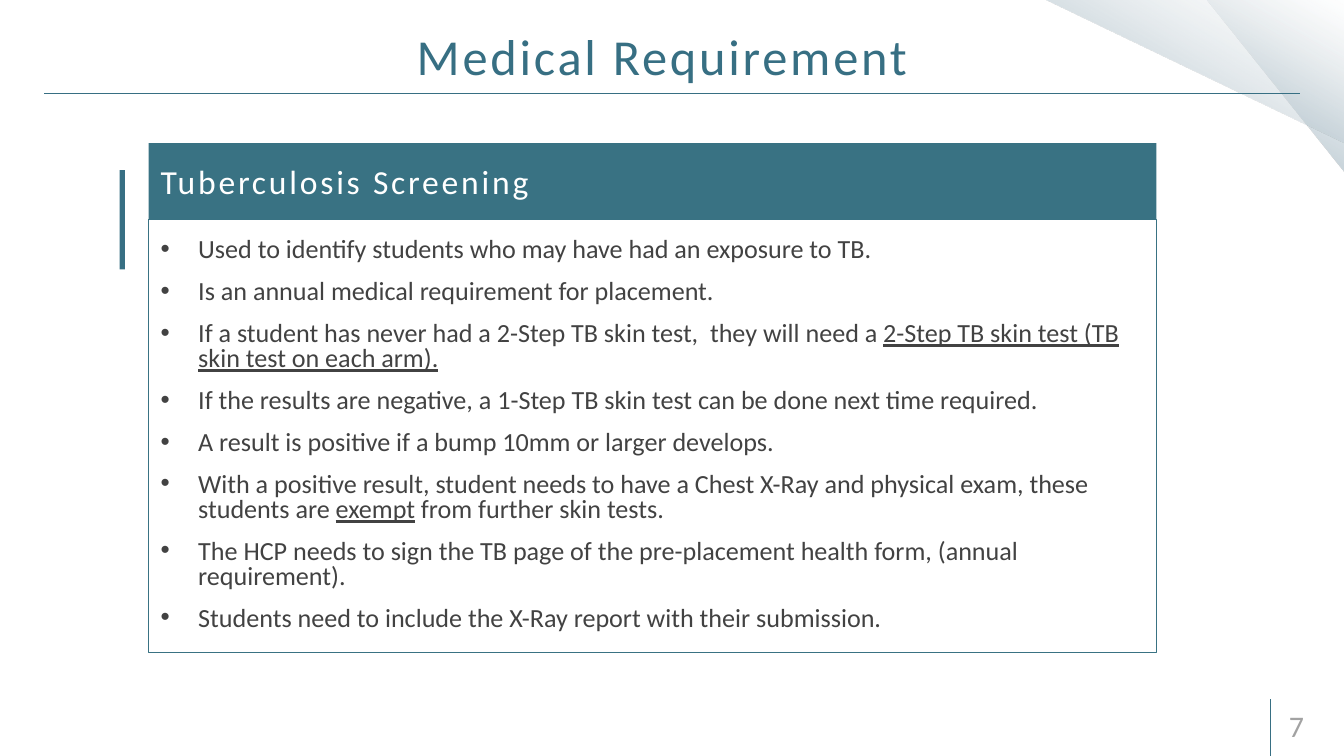
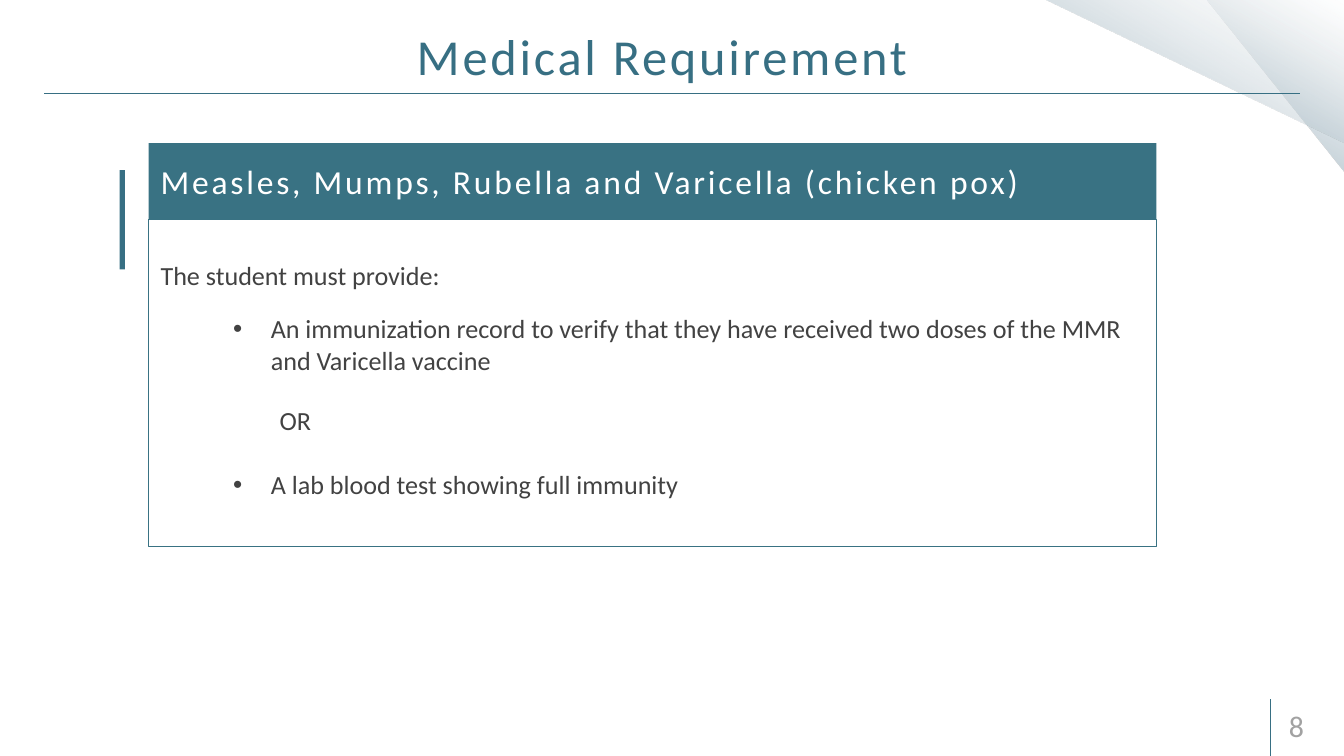
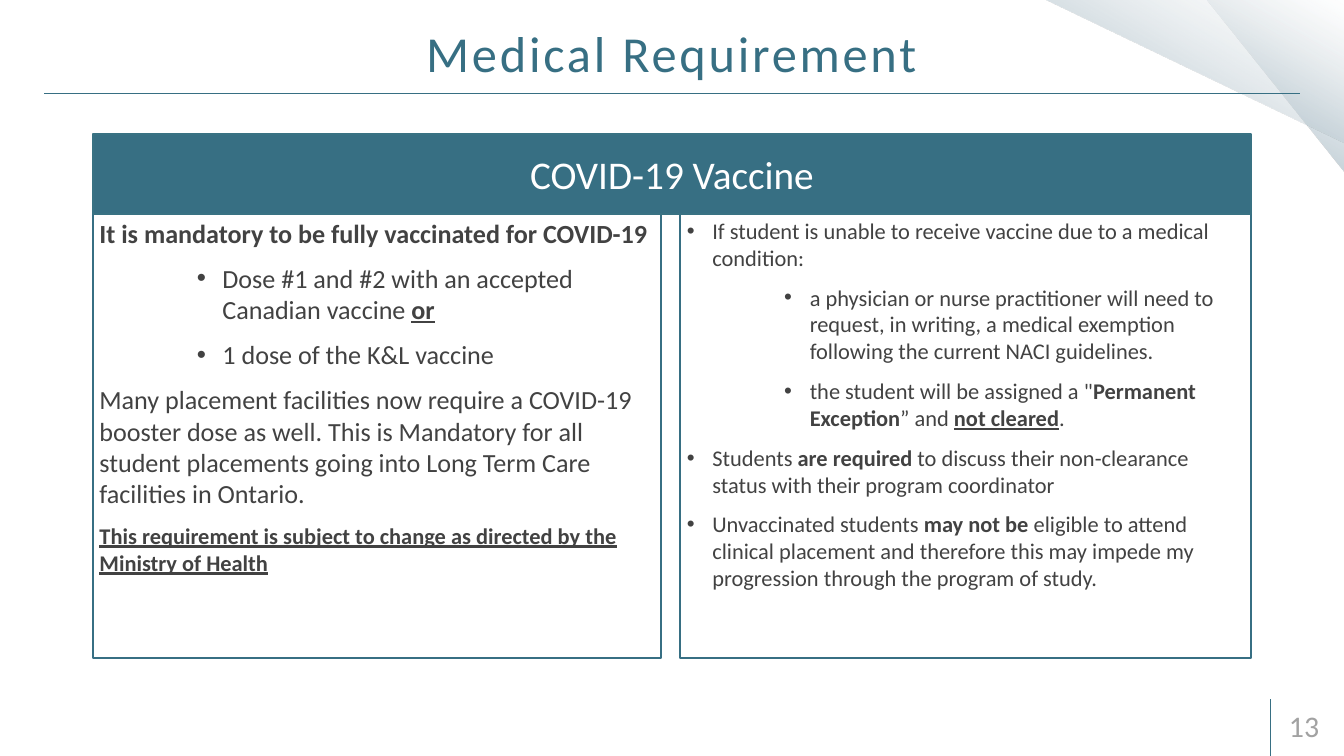
"""Build three slides on the medical requirements for student placements."""
from dataclasses import dataclass

from pptx import Presentation
from pptx import util as u
from pptx.dml.color import RGBColor
from pptx.enum import shapes, text
from pptx.oxml import parse_xml
from pptx.oxml.ns import nsdecls, qn

TEAL = RGBColor(0x37, 0x6F, 0x83)
PANEL_TEAL = RGBColor(0x39, 0x72, 0x83)
INK = RGBColor(0x42, 0x42, 0x42)
GREY = RGBColor(0xA2, 0xA2, 0xA2)
WHITE = RGBColor(0xFF, 0xFF, 0xFF)
CORNER_STOPS = [(0, "9DB4C0", 100), (50, "B3C3CC", 44), (100, "E2E8EB", 0)]
FONT = "Calibri"
TITLE = "Medical Requirement"
WIDTH, HEIGHT = 20, 11.25
WIDE_INSETS = (0.18, 0.09)
SLIM_INSETS = (0.1, 0.05)


@dataclass
class Style:
    """Describe one kind of paragraph; a hanging indent brings a bullet."""
    size: float
    color: RGBColor = INK
    left: float = 0
    hang: float = 0
    line: float = 1
    before: float = 0
    after: float = 0
    level: int = 0
    tracking: int = 0
    align: text.PP_ALIGN = text.PP_ALIGN.LEFT


CENTER = text.PP_ALIGN.CENTER
TITLE_STYLE = Style(54, TEAL, tracking=3, align=CENTER)
HEADING = Style(36, WHITE, tracking=3)
BANNER = Style(42, WHITE, align=CENTER)
NUMBER = Style(32, GREY)

POINT = Style(28, left=0.56, hang=0.56, line=0.8, after=18)
INTRO = Style(28, line=0.8, after=18)
OPTION = Style(28, left=1.64, hang=0.56, before=5.6, after=18, level=1)
EITHER = Style(28, left=1.77, line=0.8, before=20, after=9)
LAST_OPTION = Style(28, left=1.64, hang=0.56, before=26, after=9, level=1)

LEAD = Style(28, before=5.6, after=9)
DOSE = Style(28, left=1.83, hang=0.38, before=5.6, after=9, level=1)
NOTICE = Style(24, before=4.8, after=9)
RULE = Style(24, left=0.38, hang=0.38, before=4.8, after=9)
SUBRULE = Style(24, left=1.83, hang=0.38, before=4.8, after=9, level=1)

TUBERCULOSIS = [
    (POINT, "Used to identify students who may have had an exposure to TB."),
    (POINT, "Is an annual medical requirement for placement."),
    (POINT, "If a student has never had a 2-Step TB skin test,  they will need a ",
     ("2-Step TB skin test (TB skin test on each arm).", "u")),
    (POINT, "If the results are negative, a 1-Step TB skin test can be done next time required."),
    (POINT, "A result is positive if a bump 10mm or larger develops."),
    (POINT, "With a positive result, student needs to have a Chest X-Ray and physical exam, "
     "these students are ", ("exempt", "u"), " from further skin tests."),
    (POINT, "The HCP needs to sign the TB page of the pre-placement health form, "
     "(annual requirement)."),
    (POINT, "Students need to include the X-Ray report with their submission."),
]
IMMUNITY = [
    (INTRO, "The student must provide:"),
    (OPTION, "An immunization record to verify that they have received two doses of the MMR "
     "and Varicella vaccine"),
    (EITHER, "OR"),
    (LAST_OPTION, "A lab blood test showing full immunity"),
]
COVID_DOSES = [
    (LEAD, ("It is mandatory to be fully vaccinated for COVID-19", "b")),
    (DOSE, "Dose #1 and #2 with an accepted Canadian vaccine ", ("or", "bu")),
    (DOSE, "1 dose of the K&L vaccine"),
    (LEAD, "Many placement facilities now require a COVID-19 booster dose as well. "
     "This is Mandatory for all student placements going into Long Term Care facilities "
     "in Ontario."),
    (NOTICE, ("This requirement is subject to change as directed by the Ministry of Health",
              "bu")),
]
COVID_EXEMPTIONS = [
    (RULE, "If student is unable to receive vaccine due to a medical condition:"),
    (SUBRULE, "a physician or nurse practitioner will need to request, in writing, "
     "a medical exemption following the current NACI guidelines."),
    (SUBRULE, "the student will be assigned a \"", ("Permanent Exception", "b"), "” and ",
     ("not cleared", "bu"), "."),
    (RULE, "Students ", ("are required ", "b"),
     "to discuss their non-clearance status with their program coordinator"),
    (RULE, "Unvaccinated students ", ("may not be", "b"),
     " eligible to attend clinical placement and therefore this may impede my progression "
     "through the program of study."),
]
SCREENINGS = [
    ("7", "Tuberculosis Screening", TUBERCULOSIS, 6.45),
    ("8", "Measles, Mumps, Rubella and Varicella (chicken pox)", IMMUNITY, 4.87),
]


def inches(*lengths):
    return [u.Inches(length) for length in lengths]


def place(shape, box):
    shape.left, shape.top, shape.width, shape.height = inches(*box)


def paint(shape, fill=None, line=None, line_width=0.75):
    if fill is None:
        shape.fill.background()
    else:
        shape.fill.solid()
        shape.fill.fore_color.rgb = fill
    if line is None:
        shape.line.fill.background()
    else:
        shape.line.color.rgb = line
        shape.line.width = u.Pt(line_width)


def set_indent(paragraph, style):
    properties = paragraph._p.get_or_add_pPr()
    properties.set("marL", str(u.Inches(style.left)))
    properties.set("indent", str(-u.Inches(style.hang)))
    bullet = '<a:buChar %s char="•"/>' if style.hang else "<a:buNone %s/>"
    if style.hang:
        properties.append(parse_xml('<a:buFont %s typeface="Arial"/>' % nsdecls("a")))
    properties.append(parse_xml(bullet % nsdecls("a")))


def write(shape, paragraphs, insets=WIDE_INSETS, anchor=text.MSO_ANCHOR.MIDDLE):
    frame = shape.text_frame
    frame.word_wrap = True
    frame.auto_size = text.MSO_AUTO_SIZE.NONE
    frame.vertical_anchor = anchor
    frame.margin_left = frame.margin_right = u.Inches(insets[0])
    frame.margin_top = frame.margin_bottom = u.Inches(insets[1])
    for index, (style, *parts) in enumerate(paragraphs):
        paragraph = frame.add_paragraph() if index else frame.paragraphs[0]
        paragraph.level = style.level
        set_indent(paragraph, style)
        paragraph.alignment = style.align
        paragraph.line_spacing = style.line
        paragraph.space_before = u.Pt(style.before if index else 0)
        paragraph.space_after = u.Pt(style.after)
        for part in parts:
            words, marks = (part, "") if isinstance(part, str) else part
            run = paragraph.add_run()
            run.text = words
            run.font.name = FONT
            run.font.size = u.Pt(style.size)
            run.font.color.rgb = style.color
            run.font.bold = "b" in marks
            run.font.underline = "u" in marks
            if style.tracking:
                run._r.get_or_add_rPr().set("spc", str(style.tracking * 100))


def add_block(slide, kind, box, fill=None, line=None, line_width=0.75):
    shape = slide.shapes.add_shape(kind, *inches(*box))
    shape.shadow.inherit = False
    paint(shape, fill, line, line_width)
    return shape


def add_corner(slide, width, height, right=WIDTH):
    box = (right - width, 0, width, height)
    triangle = add_block(slide, shapes.MSO_SHAPE.RIGHT_TRIANGLE, box)
    triangle.rotation = 180
    stops = "".join(
        f'<a:gs pos="{position * 1000}"><a:srgbClr val="{color}">'
        f'<a:alpha val="{opacity * 1000}"/></a:srgbClr></a:gs>'
        for position, color, opacity in CORNER_STOPS)
    gradient = parse_xml(
        f'<a:gradFill {nsdecls("a")} rotWithShape="1"><a:gsLst>{stops}</a:gsLst>'
        f'<a:lin ang="{120 * 60000}" scaled="0"/></a:gradFill>')
    properties = triangle._element.spPr
    properties.replace(properties.find(qn("a:noFill")), gradient)


def add_rule(slide, start, end):
    rule = slide.shapes.add_connector(shapes.MSO_CONNECTOR.STRAIGHT, *inches(*start, *end))
    rule.line.color.rgb = TEAL
    rule.line.width = u.Pt(1)
    rule._element.spPr.append(parse_xml("<a:effectLst %s/>" % nsdecls("a")))


def add_slide(presentation, number, title_left=0.7, title_top=0.21):
    slide = presentation.slides.add_slide(presentation.slide_layouts.get_by_name("Two Content"))
    add_corner(slide, 2.04, 2.57)
    add_corner(slide, 4.48, 2.13, WIDTH + 0.02)
    add_rule(slide, (0.66, 1.39), (WIDTH - 0.66, 1.39))
    add_rule(slide, (18.91, HEIGHT), (18.91, 10.4))
    place(slide.shapes.title, (title_left, title_top, 18.31, 1.23))
    write(slide.shapes.title, [(TITLE_STYLE, TITLE)])
    footer = slide.shapes.add_textbox(*inches(19, 10.49, 0.99, 0.6))
    write(footer, [(NUMBER, number)])
    return slide


def add_screening(presentation, number, heading, paragraphs, height):
    slide = add_slide(presentation, number)
    add_block(slide, shapes.MSO_SHAPE.RECTANGLE, (1.78, 2.53, 0.08, 1.48), TEAL)
    header, body = slide.placeholders[1], slide.placeholders[2]
    place(header, (2.21, 2.13, 15, 1.14))
    paint(header, PANEL_TEAL)
    write(header, [(HEADING, heading)])
    place(body, (2.21, 3.26, 15, height))
    paint(body, line=PANEL_TEAL)
    write(body, paragraphs)


def add_covid(presentation):
    slide = add_slide(presentation, "13", 0.84, 0.16)
    left, top, width, banner_height = 1.38, 2, 17.24, 1.18
    banner = add_block(slide, shapes.MSO_SHAPE.RECTANGLE, (left, top, width, banner_height),
                       TEAL, PANEL_TEAL, 2)
    write(banner, [(BANNER, "COVID-19 Vaccine")], SLIM_INSETS)
    columns = [(left, 8.46, COVID_DOSES), (left + width - 8.5, 8.5, COVID_EXEMPTIONS)]
    for index, (column_left, column_width, paragraphs) in enumerate(columns, start=1):
        column = slide.placeholders[index]
        place(column, (column_left, top + banner_height, column_width, 6.61))
        paint(column, WHITE, TEAL, 2)
        write(column, paragraphs, SLIM_INSETS, text.MSO_ANCHOR.TOP)


def main():
    presentation = Presentation()
    presentation.slide_width, presentation.slide_height = inches(WIDTH, HEIGHT)
    for screening in SCREENINGS:
        add_screening(presentation, *screening)
    add_covid(presentation)
    presentation.save("out.pptx")


if __name__ == "__main__":
    main()
